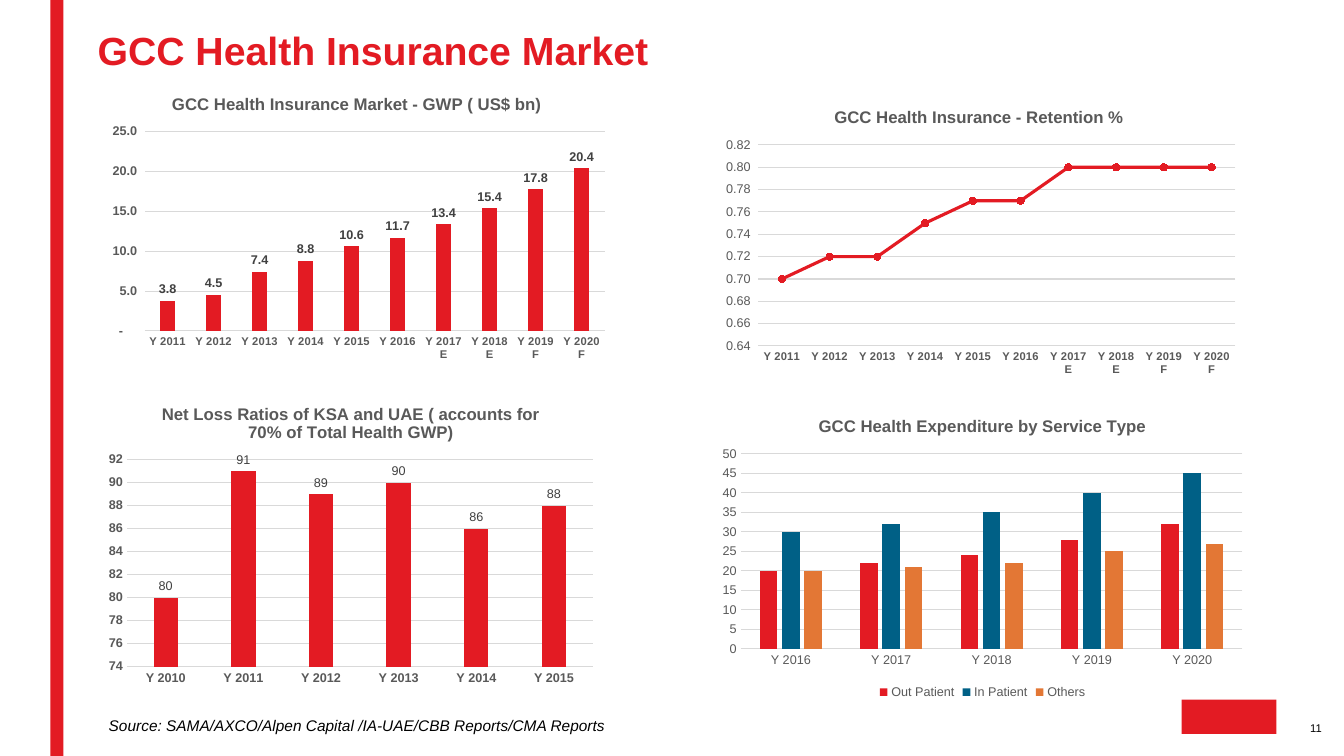
from pptx import Presentation
from pptx.chart.data import CategoryChartData
from pptx.dml.color import RGBColor
from pptx.enum.chart import (XL_CHART_TYPE, XL_LABEL_POSITION, XL_LEGEND_POSITION,
                             XL_MARKER_STYLE, XL_TICK_MARK)
from pptx.enum.shapes import MSO_SHAPE
from pptx.enum.text import MSO_ANCHOR, PP_ALIGN
from pptx.util import Inches, Pt

COLUMN = XL_CHART_TYPE.COLUMN_CLUSTERED
LINE = XL_CHART_TYPE.LINE_MARKERS
RECTANGLE = MSO_SHAPE.RECTANGLE
NO_TICK = XL_TICK_MARK.NONE

# Content
FONT = "Arial"
RED, BLUE, ORANGE = "E31B23", "006086", "E37735"
BLACK, TEXT_GREY, LABEL_GREY, GRID_GREY = "000000", "595959", "404040", "D9D9D9"
ONE_DECIMAL = r'_(* #,##0.0_);_(* \(#,##0.0\);_(* "-"??_);_(@_)'
TWO_DECIMALS = r'_(* #,##0.00_);_(* \(#,##0.00\);_(* "-"??_);_(@_)'

YEARS = [f"Y {year}" for year in range(2010, 2021)]
FORECAST_YEARS = YEARS[1:7] + ["Y 2017 E", "Y 2018 E", "Y 2019 F", "Y 2020 F"]

# scale is minimum, maximum and step; category and value are size and bold
CHARTS = [
    dict(title="GCC Health Insurance Market - GWP ( US$ bn)", kind=COLUMN,
         box=(0.98, 0.79, 5.12, 2.84), categories=FORECAST_YEARS,
         series=[("GWP", RED, [3.8, 4.5, 7.4, 8.8, 10.6, 11.7, 13.4, 15.4, 17.8, 20.4])],
         scale=(0, 25, 5), format=ONE_DECIMAL, category=(8, True), value=(9, True),
         bold_labels=True),
    dict(title="GCC Health Insurance - Retention %", kind=LINE,
         box=(7.06, 0.92, 5.3, 2.86), categories=FORECAST_YEARS,
         series=[("Retention", RED, [0.7, 0.72, 0.72, 0.75, 0.77, 0.77, 0.8, 0.8, 0.8, 0.8])],
         scale=(0.64, 0.82, 0.02), format=TWO_DECIMALS, category=(8, True), value=(9, False)),
    dict(title="Net Loss Ratios of KSA and UAE ( accounts for 70% of Total Health GWP)",
         kind=COLUMN, box=(0.98, 3.86, 5, 3), categories=YEARS[:6],
         series=[("Net loss ratio", RED, [80, 91, 89, 90, 86, 88])],
         scale=(74, 92, 2), format="General", category=(9, True), value=(9, True),
         bold_labels=False),
    dict(title="GCC Health Expenditure by Service Type", kind=COLUMN,
         box=(7.06, 3.98, 5.37, 3), categories=YEARS[6:],
         series=[("Out Patient", RED, [20, 22, 24, 28, 32]),
                 ("In Patient", BLUE, [30, 32, 35, 40, 45]),
                 ("Others", ORANGE, [20, 21, 22, 25, 27])],
         scale=(0, 50, 5), format="General", category=(9, False), value=(9, False)),
]


def paint(color_format, color):
    color_format.rgb = RGBColor.from_string(color)


def style_font(font, size, color, bold=False, italic=False):
    font.name, font.size, font.bold, font.italic = FONT, Pt(size), bold, italic
    paint(font.color, color)


def style_line(line, color, width):
    line.width = Pt(width)
    line.fill.solid()
    paint(line.fill.fore_color, color)


def fill_solid(fill, color):
    fill.solid()
    paint(fill.fore_color, color)


def add_block(slide, box, color):
    shape = slide.shapes.add_shape(RECTANGLE, *map(Inches, box))
    shape.shadow.inherit = False
    fill_solid(shape.fill, color)
    shape.line.fill.background()


def add_text(slide, box, text, size, color, margins, bold=False, italic=False,
             align=PP_ALIGN.LEFT, wrap=True):
    frame = slide.shapes.add_textbox(*map(Inches, box)).text_frame
    frame.word_wrap = wrap
    frame.vertical_anchor = MSO_ANCHOR.BOTTOM
    (frame.margin_left, frame.margin_top,
     frame.margin_right, frame.margin_bottom) = map(Inches, margins)
    frame.text = text
    paragraph = frame.paragraphs[0]
    paragraph.alignment = align
    paragraph.line_spacing = 0.9
    style_font(paragraph.runs[0].font, size, color, bold, italic)


def style_axes(chart, spec):
    category_axis, value_axis = chart.category_axis, chart.value_axis
    for axis, (size, bold) in ((category_axis, spec["category"]),
                               (value_axis, spec["value"])):
        axis.major_tick_mark = axis.minor_tick_mark = NO_TICK
        style_font(axis.tick_labels.font, size, TEXT_GREY, bold)
    style_line(category_axis.format.line, GRID_GREY, 0.75)
    value_axis.format.line.fill.background()
    value_axis.has_major_gridlines = True
    style_line(value_axis.major_gridlines.format.line, GRID_GREY, 0.75)
    value_axis.minimum_scale, value_axis.maximum_scale, value_axis.major_unit = spec["scale"]
    value_axis.tick_labels.number_format = spec["format"]
    value_axis.tick_labels.number_format_is_linked = False


def style_series(series, color, kind):
    if kind == LINE:
        series.smooth = False
        style_line(series.format.line, color, 2.25)
        series.marker.style = XL_MARKER_STYLE.CIRCLE
        series.marker.size = 5
        fill_solid(series.marker.format.fill, color)
        style_line(series.marker.format.line, color, 0.75)
    else:
        series.invert_if_negative = False
        fill_solid(series.format.fill, color)


def add_market_chart(slide, spec):
    data = CategoryChartData(number_format=spec["format"])
    data.categories = spec["categories"]
    for name, _, values in spec["series"]:
        data.add_series(name, values)
    chart = slide.shapes.add_chart(spec["kind"], *map(Inches, spec["box"]), data).chart
    style_font(chart.font, 10, BLACK)

    # Title and legend
    chart.has_title = True
    title_frame = chart.chart_title.text_frame
    title_frame.text = spec["title"]
    style_font(title_frame.paragraphs[0].runs[0].font, 12, TEXT_GREY, bold=True)
    chart.chart_title.include_in_layout = False
    chart.has_legend = len(spec["series"]) > 1
    if chart.has_legend:
        chart.legend.position = XL_LEGEND_POSITION.BOTTOM
        chart.legend.include_in_layout = False
        style_font(chart.legend.font, 9, TEXT_GREY)

    # Axes, series and value labels
    style_axes(chart, spec)
    plot = chart.plots[0]
    plot.vary_by_categories = False
    if spec["kind"] == COLUMN:
        plot.gap_width, plot.overlap = 219, -27
    for series, (_, color, _) in zip(plot.series, spec["series"]):
        style_series(series, color, spec["kind"])
    if "bold_labels" in spec:
        plot.has_data_labels = True
        labels = plot.data_labels
        labels.show_value = True
        labels.position = XL_LABEL_POSITION.OUTSIDE_END
        labels.number_format = spec["format"]
        labels.number_format_is_linked = False
        style_font(labels.font, 9, LABEL_GREY, spec["bold_labels"])


def main():
    presentation = Presentation()
    presentation.slide_width, presentation.slide_height = Inches(13.33), Inches(7.5)
    slide = presentation.slides.add_slide(presentation.slide_layouts[6])

    # Page number, side bar and logo block
    add_text(slide, (12.47, 7.16, 0.64, 0.13), "11", 8, BLACK, (0, 0, 0, 0),
             align=PP_ALIGN.RIGHT, wrap=False)
    add_block(slide, (0.5, 0, 0.13, 7.5), RED)
    add_block(slide, (11.72, 6.94, 0.94, 0.34), RED)

    # Title and source
    add_text(slide, (0.87, 0.13, 11.69, 0.65), "GCC Health Insurance Market", 28, RED,
             (0.1, 0.05, 0.1, 0.05), bold=True)
    add_text(slide, (0.98, 6.84, 9.79, 0.45),
             "Source: SAMA/AXCO/Alpen Capital /IA-UAE/CBB Reports/CMA Reports",
             11, BLACK, (0.1, 0, 0, 0), italic=True)

    # Charts
    for spec in CHARTS:
        add_market_chart(slide, spec)
    presentation.save("out.pptx")


if __name__ == "__main__":
    main()
